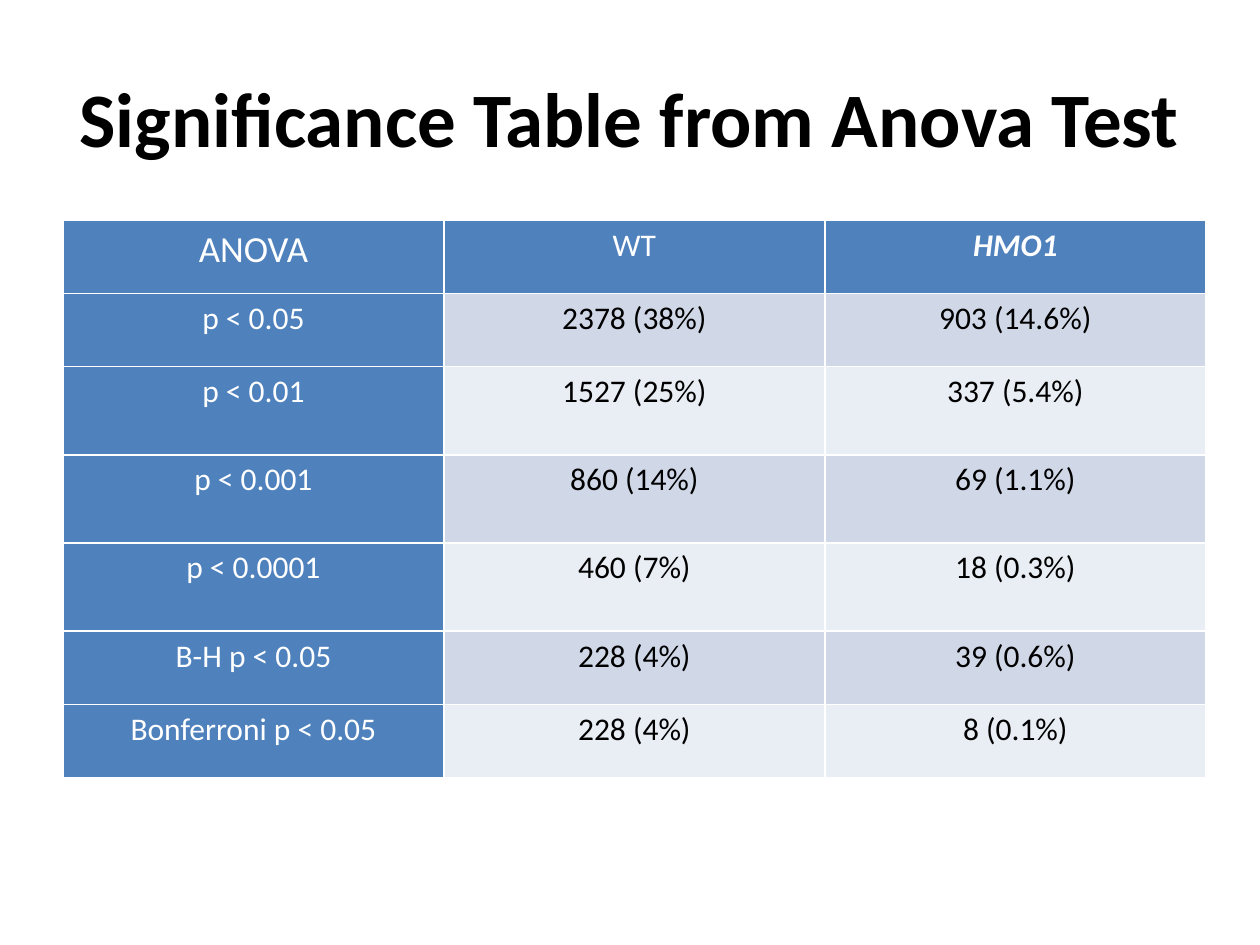
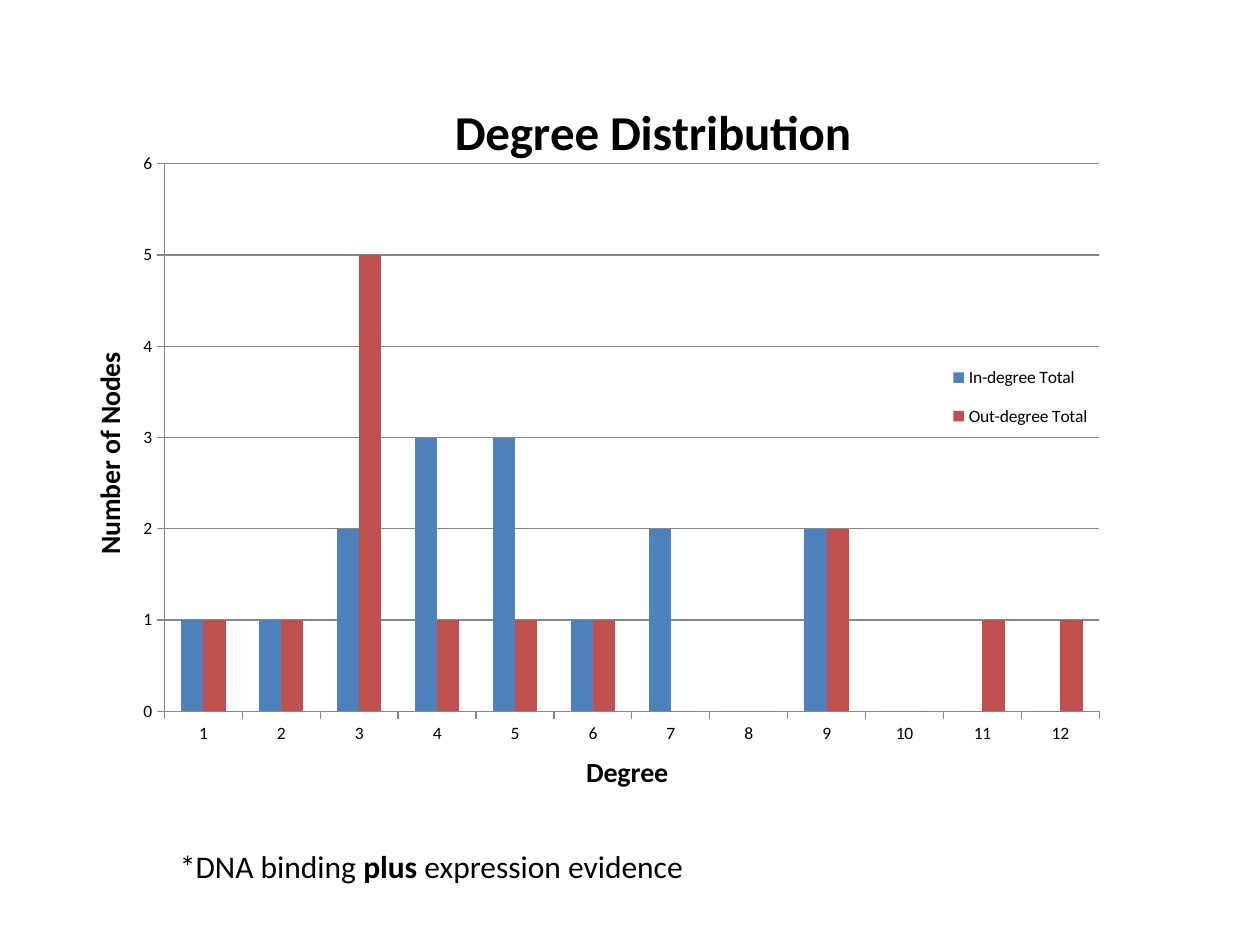
from lxml.etree import SubElement
from pptx import Presentation
from pptx.chart.data import CategoryChartData
from pptx.dml.color import RGBColor
from pptx.enum.chart import XL_CHART_TYPE, XL_LEGEND_POSITION, XL_TICK_MARK
from pptx.enum.text import MSO_ANCHOR, MSO_AUTO_SIZE, PP_ALIGN
from pptx.oxml import parse_xml
from pptx.oxml.ns import nsdecls, qn
from pptx.util import Inches, Pt

FONT = "Calibri"
BLACK, WHITE, GRAY = "000000", "FFFFFF", "868686"
BLUE, RED = "4F81BD", "C0504D"
BANDS = ("D0D8E8", "E9EDF4")
WIDTH, HEIGHT = Inches(10), Inches(7.5)

SIGNIFICANCE = [
    ("ANOVA", "WT", "HMO1"),
    ("p < 0.05", "2378 (38%)", "903 (14.6%)"),
    ("p < 0.01", "1527 (25%)", "337 (5.4%)"),
    ("p < 0.001", "860 (14%)", "69 (1.1%)"),
    ("p < 0.0001", "460 (7%)", "18 (0.3%)"),
    ("B-H p < 0.05", "228 (4%)", "39 (0.6%)"),
    ("Bonferroni p < 0.05", "228 (4%)", "8 (0.1%)"),
]
ROW_HEIGHTS = (0.58, 0.58, 0.7, 0.7, 0.7, 0.58, 0.58)
DEGREES = [
    ("In-degree Total", (1, 1, 2, 3, 3, 1, 2, 0, 2, 0, 0, 0), BLUE),
    ("Out-degree Total", (1, 1, 5, 1, 1, 1, 0, 0, 2, 0, 1, 1), RED),
]


def rgb(color):
    return RGBColor.from_string(color)


def box(left, top, width, height):
    return [Inches(v) for v in (left, top, width, height)]


def style_font(font, size, color=BLACK, bold=False, italic=False):
    font.name, font.size = FONT, Pt(size)
    font.bold, font.italic = bold, italic
    font.color.rgb = rgb(color)


def add_run(p, text, size, color=BLACK, bold=False, italic=False):
    r = p.add_run()
    r.text = text
    style_font(r.font, size, color, bold, italic)


def add_title(s, text, at):
    sp = s.shapes.title
    sp.left, sp.top, sp.width, sp.height = at
    tf = sp.text_frame
    tf.vertical_anchor = MSO_ANCHOR.MIDDLE
    p = tf.paragraphs[0]
    p.alignment = PP_ALIGN.CENTER
    add_run(p, text, 44, bold=True)


def add_borders(cell, color, width):
    tc_pr = cell._tc.get_or_add_tcPr()
    for i, side in enumerate("LRTB"):
        tc_pr.insert(i, parse_xml(
            f'<a:ln{side} {nsdecls("a")} w="{Pt(width)}"><a:solidFill>'
            f'<a:srgbClr val="{color}"/></a:solidFill></a:ln{side}>'))


def fill_cell(cell, text, row, col):
    label = row == 0 or col == 0
    cell.margin_left = cell.margin_right = Inches(0.07)
    cell.margin_top = cell.margin_bottom = 0
    add_borders(cell, WHITE, 1)
    cell.fill.solid()
    cell.fill.fore_color.rgb = rgb(BLUE if label else BANDS[(row - 1) % 2])
    p = cell.text_frame.paragraphs[0]
    p.alignment, p.line_spacing = PP_ALIGN.CENTER, 1.15
    gene = (row, col) == (0, 2)
    add_run(p, text, 21 if row == col == 0 else 18,
            WHITE if label else BLACK, gene, gene)


def add_significance_table(s, at):
    table = s.shapes.add_table(len(SIGNIFICANCE), 3, *at).table
    for column in table.columns:
        column.width = at[2] // 3
    for row, values in enumerate(SIGNIFICANCE):
        table.rows[row].height = Inches(ROW_HEIGHTS[row])
        for col, text in enumerate(values):
            fill_cell(table.cell(row, col), text, row, col)


def place(element, inner=False, **shares):
    for old in element.findall(qn("c:layout")):
        element.remove(old)
    before = element.xpath("./c:tx | ./c:legendPos")
    layout = parse_xml(f'<c:layout {nsdecls("c")}/>')
    element.insert(element.index(before[0]) + 1 if before else 0, layout)
    manual = SubElement(layout, qn("c:manualLayout"))
    if inner:
        SubElement(manual, qn("c:layoutTarget")).set("val", "inner")
    for key in "xy":
        SubElement(manual, qn(f"c:{key}Mode")).set("val", "edge")
    for key, share in shares.items():
        SubElement(manual, qn(f"c:{key}")).set("val", str(share))


def title_chart_part(part, text, size):
    tf = part.text_frame
    add_run(tf.paragraphs[0], text, size, bold=True)


def style_axis(axis, title):
    axis.major_tick_mark = XL_TICK_MARK.OUTSIDE
    axis.minor_tick_mark = XL_TICK_MARK.NONE
    axis.format.line.color.rgb = rgb(GRAY)
    style_font(axis.tick_labels.font, 10)
    title_chart_part(axis.axis_title, title, 16)


def add_degree_chart(s, at):
    data = CategoryChartData()
    data.categories = [str(n) for n in range(1, 13)]
    for name, values, _ in DEGREES:
        data.add_series(name, values)
    chart = s.shapes.add_chart(XL_CHART_TYPE.COLUMN_CLUSTERED, *at, data).chart
    style_font(chart.font, 10)
    title_chart_part(chart.chart_title, "Degree Distribution", 28)
    plot = chart.plots[0]
    plot.gap_width, plot.vary_by_categories = 150, False
    for series, (_, _, color) in zip(plot.series, DEGREES):
        series.format.fill.solid()
        series.format.fill.fore_color.rgb = rgb(color)
    style_axis(chart.category_axis, "Degree")
    axis = chart.value_axis
    style_axis(axis, "Number of Nodes")
    axis.minimum_scale, axis.maximum_scale, axis.major_unit = 0, 6, 1
    axis.has_major_gridlines = True
    axis.major_gridlines.format.line.color.rgb = rgb(GRAY)
    chart.has_legend = True
    legend = chart.legend
    legend.position = XL_LEGEND_POSITION.RIGHT
    legend.include_in_layout = False
    style_font(legend.font, 10)
    root = chart.element
    heading, degree, nodes = root.xpath(".//c:title")
    place(heading, x=0.34, y=0.05)
    place(degree, x=0.46, y=0.94)
    place(nodes, x=0.02, y=0.4)
    place(root.xpath(".//c:legend")[0], x=0.77, y=0.4, w=0.16, h=0.13)
    place(root.xpath(".//c:plotArea")[0], True,
          x=0.09, y=0.15, w=0.83, h=0.74)


def add_evidence_note(s, at):
    tf = s.shapes.add_textbox(*at).text_frame
    tf.word_wrap = False
    tf.auto_size = MSO_AUTO_SIZE.SHAPE_TO_FIT_TEXT
    p = tf.paragraphs[0]
    add_run(p, "*DNA binding ", 18)
    add_run(p, "plus", 18, bold=True)
    add_run(p, " expression evidence", 18)


def main():
    prs = Presentation()
    prs.slide_width, prs.slide_height = WIDTH, HEIGHT
    s = prs.slides.add_slide(prs.slide_layouts[5])
    add_significance_table(s, box(0.5, 1.75, 9.07, 4.42))
    add_title(s, "Significance Table from Anova Test", box(0.5, 0.3, 9, 1.25))
    s = prs.slides.add_slide(prs.slide_layouts[6])
    add_degree_chart(s, box(0.5, 0.42, 8.94, 5.92))
    add_evidence_note(s, box(1.33, 6.67, 4.24, 0.4))
    prs.save("out.pptx")


if __name__ == "__main__":
    main()
